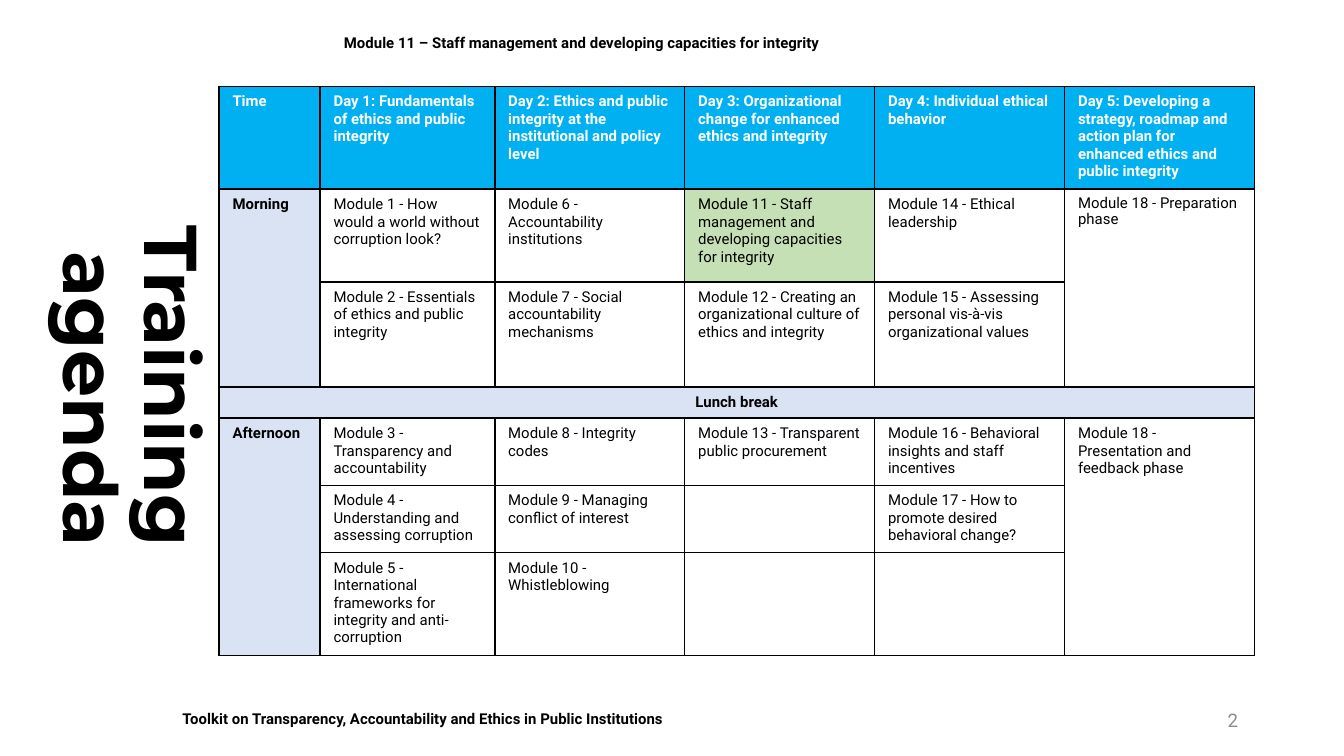
from dataclasses import dataclass
from typing import Optional

from lxml import etree
from pptx import Presentation
from pptx import util as u
from pptx.dml.color import RGBColor
from pptx.enum import text
from pptx.oxml import ns


@dataclass(frozen=True)
class Theme:
    body: str = "Roboto"
    display: str = "Montserrat"
    black: str = "000000"
    white: str = "FFFFFF"
    grey: str = "8C8C8C"
    header: str = "00B0F0"
    band: str = "DAE3F3"
    current: str = "C5E0B4"
    small: float = 8
    number: float = 10
    title: float = 40
    border: float = 1


@dataclass(frozen=True)
class Box:
    """Place of a text box, in centimetres."""
    left: float
    top: float
    width: float
    height: float


@dataclass(frozen=True)
class Entry:
    """One agenda cell, with the number of rows and columns it covers."""
    row: int
    col: int
    words: str
    fill: Optional[str] = None
    color: str = "000000"
    bold: bool = False
    align: text.PP_ALIGN = text.PP_ALIGN.LEFT
    rows: int = 1
    cols: int = 1
    spacing: Optional[float] = None


T = Theme()
COLS = [1.91, 3.3] + [3.59] * 4
# Least row heights: rows grow to hold their text
ROWS = [1.3, 1.75, 1.98, 0.5, 1.04, 1.04, 0.76]

DAYS = [
    "Time",
    "Day 1: Fundamentals of ethics and public integrity",
    "Day 2: Ethics and public integrity at the institutional and policy level",
    "Day 3: Organizational change for enhanced ethics and integrity",
    "Day 4: Individual ethical behavior",
    "Day 5: Developing a strategy, roadmap and action plan for enhanced ethics and public integrity",
]

# Modules of days 1 to 4, by table row
MODULES = {
    1: ["Module 1 - How would a world without corruption look?",
        "Module 6 - Accountability institutions",
        "Module 11 - Staff management and developing capacities for integrity",
        "Module 14 - Ethical leadership"],
    2: ["Module 2 - Essentials of ethics and public integrity",
        "Module 7 - Social accountability mechanisms",
        "Module 12 - Creating an organizational culture of ethics and integrity",
        "Module 15 - Assessing personal vis-à-vis organizational values"],
    4: ["Module 3 - Transparency and accountability",
        "Module 8 - Integrity codes",
        "Module 13 - Transparent public procurement",
        "Module 16 - Behavioral insights and staff incentives"],
    5: ["Module 4 - Understanding and assessing corruption",
        "Module 9 - Managing conflict of interest",
        "",
        "Module 17 - How to promote desired behavioral change?"],
    6: ["Module 5 - International frameworks for integrity and anti-corruption",
        "Module 10 - Whistleblowing", "", ""],
}

# Cells that span several rows or columns
SPANS = [
    Entry(1, 0, "Morning", T.band, bold=True, rows=2),
    Entry(1, 5, "Module 18 - Preparation phase", rows=2, spacing=0.9),
    Entry(3, 0, "Lunch break", T.band, bold=True,
          align=text.PP_ALIGN.CENTER, cols=6),
    Entry(4, 0, "Afternoon", T.band, bold=True, rows=3),
    Entry(4, 5, "Module 18 - Presentation and feedback phase", rows=3),
]


def write(tf, words: str, *, size: float = T.small, font: str = T.body,
          color: str = T.black, bold: bool = False,
          align: text.PP_ALIGN = text.PP_ALIGN.LEFT,
          spacing: Optional[float] = None) -> None:
    p = tf.paragraphs[0]
    p.alignment = align
    p.line_spacing = spacing
    p.font.size = u.Pt(size)
    if words:
        r = p.add_run()
        r.text = words
        r.font.size = u.Pt(size)
        r.font.name = font
        r.font.bold = bold
        r.font.color.rgb = RGBColor.from_string(color)


def place(sp, box: Box) -> None:
    sp.left, sp.top = u.Cm(box.left), u.Cm(box.top)
    sp.width, sp.height = u.Cm(box.width), u.Cm(box.height)


def add_label(s, box: Box, words: str, anchor: text.MSO_ANCHOR, **fmt):
    sp = s.shapes.add_textbox(0, 0, 0, 0)
    place(sp, box)
    tf = sp.text_frame
    tf.word_wrap = True
    tf.vertical_anchor = anchor
    write(tf, words, **fmt)
    return sp


def add_title(s) -> None:
    # A wide box turned a quarter clockwise about its centre
    sp = s.shapes.title
    place(sp, Box(-3.2, 5.54, 11.25, 3.43))
    sp.rotation = 90
    tf = sp.text_frame
    tf.word_wrap = True
    tf.auto_size = text.MSO_AUTO_SIZE.NONE
    tf.vertical_anchor = text.MSO_ANCHOR.MIDDLE
    tf.margin_right = u.Cm(2.55)
    write(tf, "Training agenda", size=T.title, font=T.display, bold=True,
          align=text.PP_ALIGN.RIGHT, spacing=0.9)


def set_borders(cell) -> None:
    tc_pr = cell._tc.get_or_add_tcPr()
    for side in ("lnL", "lnR", "lnT", "lnB"):
        ln = etree.SubElement(tc_pr, ns.qn(f"a:{side}"), w=str(u.Pt(T.border)))
        fill = etree.SubElement(ln, ns.qn("a:solidFill"))
        etree.SubElement(fill, ns.qn("a:srgbClr"), val=T.black)


def fill_cell(table, e: Entry) -> None:
    cell = table.cell(e.row, e.col)
    if e.rows * e.cols > 1:
        cell.merge(table.cell(e.row + e.rows - 1, e.col + e.cols - 1))
    if e.fill:
        cell.fill.solid()
        cell.fill.fore_color.rgb = RGBColor.from_string(e.fill)
    write(cell.text_frame, e.words, color=e.color, bold=e.bold,
          align=e.align, spacing=e.spacing)


def add_agenda(s) -> None:
    table = s.shapes.add_table(len(ROWS), len(COLS), u.Cm(4.14), u.Cm(1.63),
                               u.Cm(sum(COLS)), u.Cm(sum(ROWS))).table
    table.first_row = table.horz_banding = False
    for col, width in zip(table.columns, COLS):
        col.width = u.Cm(width)
    for row, height in zip(table.rows, ROWS):
        row.height = u.Cm(height)
    for cell in table.iter_cells():
        set_borders(cell)
        cell.fill.background()
        cell.text_frame.paragraphs[0].font.size = u.Pt(T.small)

    entries = [Entry(0, c, day, T.header, T.white, True)
               for c, day in enumerate(DAYS)]
    entries += [Entry(r, c, words, T.current if (r, c) == (1, 3) else None)
                for r, modules in MODULES.items()
                for c, words in enumerate(modules, 1)]
    for e in entries + SPANS:
        fill_cell(table, e)


def main() -> None:
    prs = Presentation()
    prs.slide_width, prs.slide_height = u.Cm(25.4), u.Cm(14.28)
    s = prs.slides.add_slide(prs.slide_layouts[5])

    # Footer, on a white strip
    footer = add_label(
        s, Box(3.2, 13.28, 18.21, 0.61),
        "Toolkit on Transparency, Accountability and Ethics in Public Institutions",
        text.MSO_ANCHOR.TOP, bold=True)
    footer.fill.solid()
    footer.fill.fore_color.rgb = RGBColor.from_string(T.white)

    # Title, page number and module heading
    add_title(s)
    add_label(s, Box(17.93, 13.23, 5.72, 0.76), "2", text.MSO_ANCHOR.MIDDLE,
              size=T.number, color=T.grey, align=text.PP_ALIGN.RIGHT)
    add_label(s, Box(6.25, 0.25, 17.4, 1.12),
              "Module 11 – Staff management and developing capacities for integrity",
              text.MSO_ANCHOR.MIDDLE, bold=True)

    # Five-day agenda
    add_agenda(s)
    prs.save("out.pptx")


if __name__ == "__main__":
    main()
